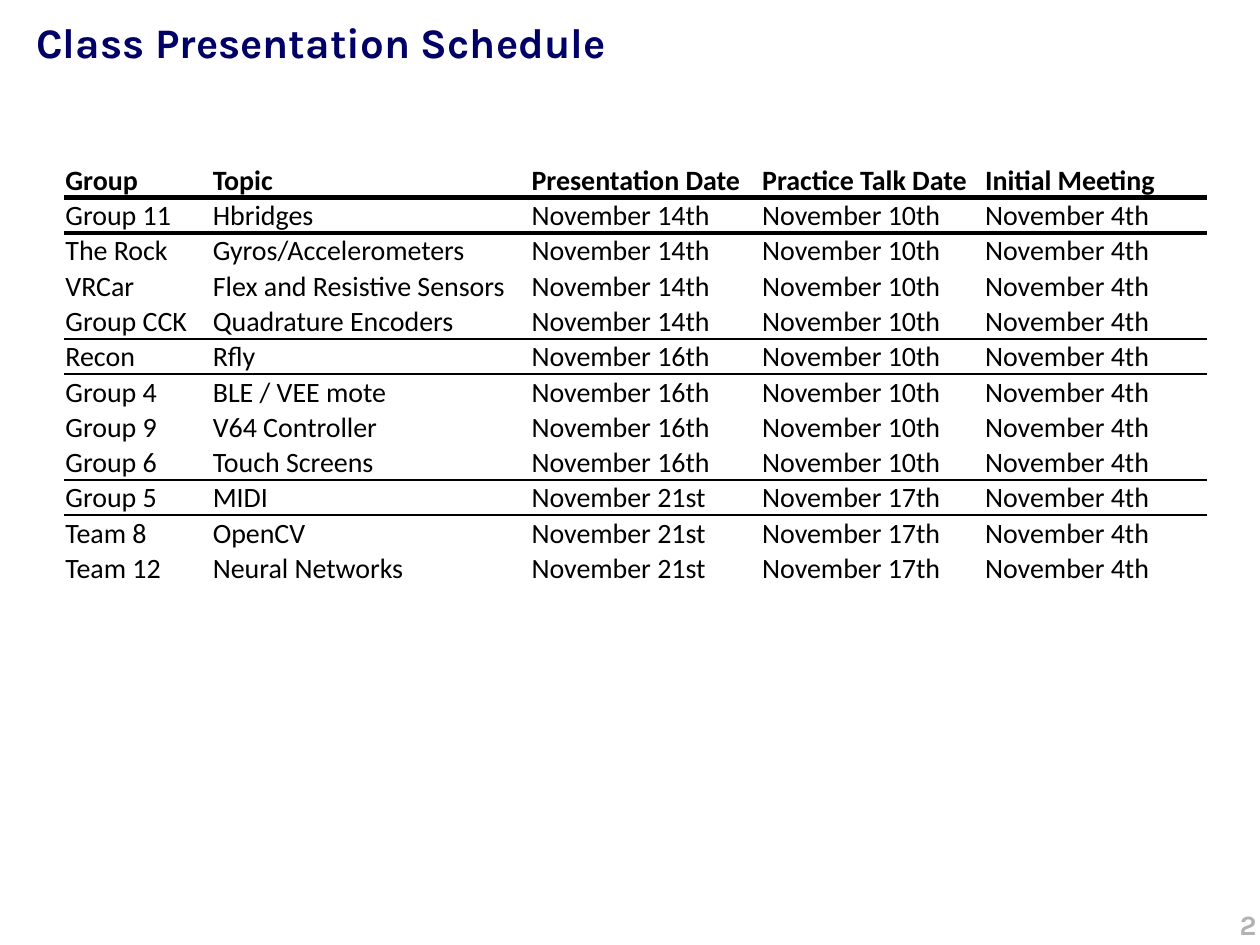
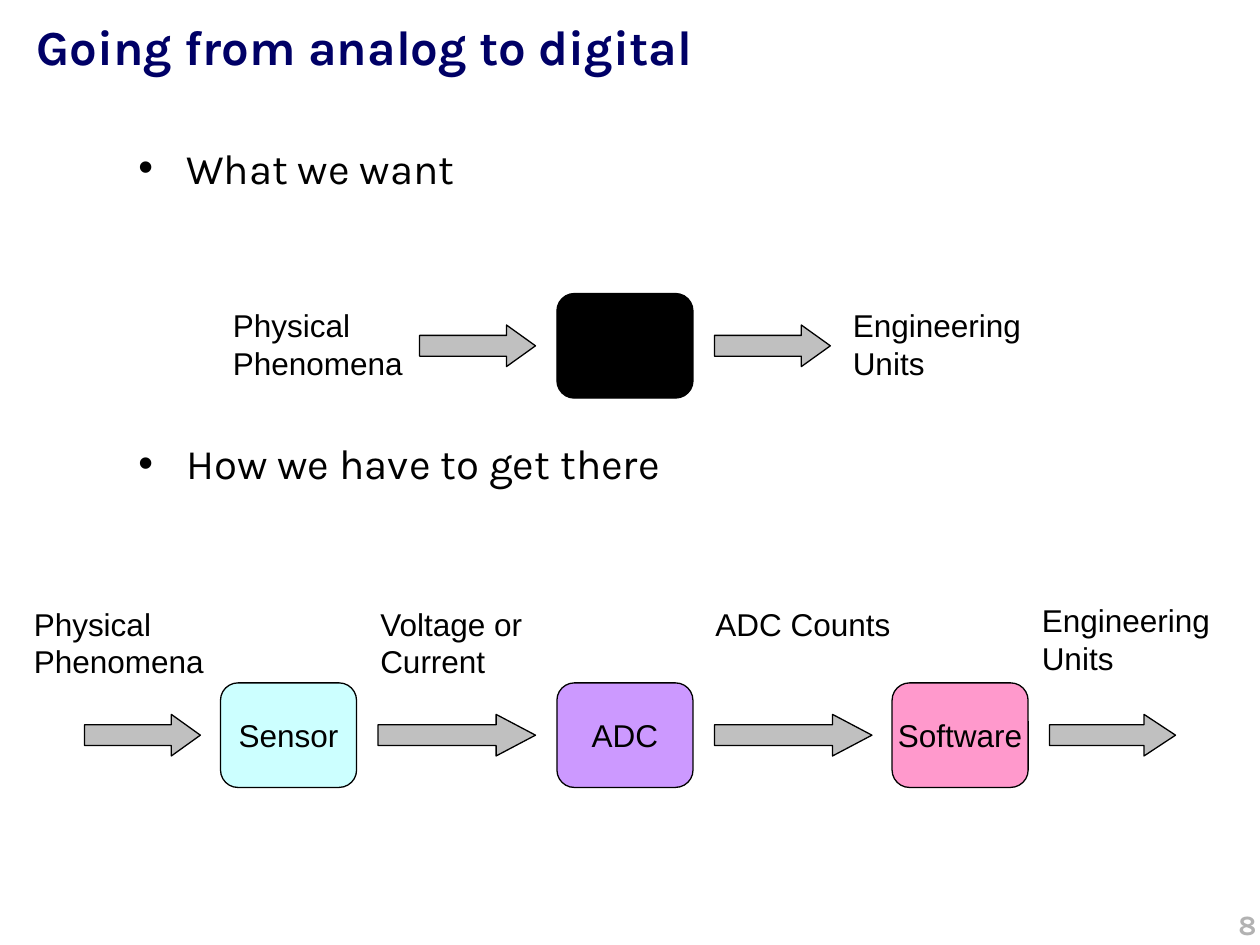
from lxml import etree
from pptx import Presentation
from pptx.dml.color import RGBColor
from pptx.enum import shapes, text
from pptx.oxml import ns
from pptx.util import Inches, Pt

NAVY, BLACK, GRAY, SILVER = "000066", "000000", "B2B2B2", "C0C0C0"
TITLE_FONT, LABEL_FONT, TABLE_FONT = "Karla", "Arial", "Calibri"
NO_GRID_STYLE = "{2D5ABB26-0587-4C30-8999-92F81FD0307C}"

HEADINGS = ["Group", "Topic", "Presentation Date", "Practice Talk Date", "Initial Meeting"]
COLUMN_WIDTHS = [1.17, 2.53, 1.83, 1.77, 1.77]
INITIAL_MEETING = "November 4th"
SESSIONS = [
    ("November 14th", "November 10th", [
        ("Group 11", "Hbridges"),
        ("The Rock", "Gyros/Accelerometers"),
        ("VRCar", "Flex and Resistive Sensors"),
        ("Group CCK", "Quadrature Encoders")]),
    ("November 16th", "November 10th", [
        ("Recon", "Rfly"),
        ("Group 4", "BLE / VEE mote"),
        ("Group 9", "V64 Controller"),
        ("Group 6", "Touch Screens")]),
    ("November 21st", "November 17th", [
        ("Group 5", "MIDI"),
        ("Team 8", "OpenCV"),
        ("Team 12", "Neural Networks")]),
]

BOX_WIDTH, BOX_HEIGHT, ARROW_HEIGHT = 1.08, 0.83, 0.33
ARROW_OFFSET, LABEL_WIDTH = 0.25, 1.67


def color(value):
    return RGBColor.from_string(value)


def add_run(paragraph, words, size, font, ink=BLACK, bold=False):
    run = paragraph.add_run()
    run.text = words
    run.font.size = Pt(size)
    run.font.name = font
    run.font.bold = bold
    run.font.color.rgb = color(ink)


def add_text_box(slide, left, top, width, height):
    box = slide.shapes.add_textbox(Inches(left), Inches(top), Inches(width), Inches(height))
    box.text_frame.word_wrap = True
    return box.text_frame


def add_framed_slide(presentation, title, title_size, number):
    slide = presentation.slides.add_slide(presentation.slide_layouts[6])
    title_frame = add_text_box(slide, 0.19, 0.08, 9.71, 1)
    add_run(title_frame.paragraphs[0], title, title_size, TITLE_FONT, NAVY, True)
    paragraph = add_text_box(slide, 6.9, 7.15, 3.17, 0.5).paragraphs[0]
    paragraph.alignment = text.PP_ALIGN.RIGHT
    add_run(paragraph, str(number), 16, TITLE_FONT, GRAY, True)
    return slide


def add_border(cell, side, width):
    line = etree.Element(ns.qn(f"a:{side}"), w=str(Pt(width)))
    fill = etree.SubElement(line, ns.qn("a:solidFill"))
    etree.SubElement(fill, ns.qn("a:srgbClr"), val=BLACK)
    cell._tc.get_or_add_tcPr().insert(0, line)


def fill_cell(cell, words, bold):
    cell.fill.background()
    cell.vertical_anchor = text.MSO_ANCHOR.BOTTOM
    cell.margin_left = cell.margin_right = cell.margin_top = Inches(0.01)
    cell.margin_bottom = 0
    add_run(cell.text_frame.paragraphs[0], words, 16, TABLE_FONT, bold=bold)


def add_schedule(slide, left, top):
    rows = [HEADINGS]
    rules = {0: 3}
    for talk_date, practice_date, teams in SESSIONS:
        rows += [[group, topic, talk_date, practice_date, INITIAL_MEETING]
                 for group, topic in teams]
        rules.setdefault(len(rows) - 1, 1)
    rules.pop(len(rows) - 1)

    frame = slide.shapes.add_table(len(rows), len(HEADINGS), Inches(left), Inches(top),
                                   Inches(sum(COLUMN_WIDTHS)), Inches(3.39))
    table = frame.table
    table.first_row = table.horz_banding = False
    table._tbl.tblPr.find(ns.qn("a:tableStyleId")).text = NO_GRID_STYLE
    for column, width in zip(table.columns, COLUMN_WIDTHS):
        column.width = Inches(width)
    for index, values in enumerate(rows):
        table.rows[index].height = Inches(0.28 if index else 0.29)
        for cell, words in zip(table.rows[index].cells, values):
            fill_cell(cell, words, index == 0)
            if index in rules:
                add_border(cell, "lnB", rules[index])
            if index - 1 in rules:
                add_border(cell, "lnT", rules[index - 1])


def add_bullets(slide, left, top, width, height, bullets):
    frame = add_text_box(slide, left, top, width, height)
    for index, (words, space_before) in enumerate(bullets):
        paragraph = frame.add_paragraph() if index else frame.paragraphs[0]
        paragraph.space_before = Pt(space_before)
        properties = paragraph._p.get_or_add_pPr()
        properties.set("marL", str(Inches(0.38)))
        properties.set("indent", str(-Inches(0.38)))
        etree.SubElement(properties, ns.qn("a:buFont"), typeface=LABEL_FONT)
        etree.SubElement(properties, ns.qn("a:buChar"), char="•")
        add_run(paragraph, words, 24, TITLE_FONT)


def add_block(slide, kind, left, top, width, height, fill):
    shape = slide.shapes.add_shape(kind, Inches(left), Inches(top), Inches(width), Inches(height))
    shape.shadow.inherit = False
    shape.fill.solid()
    shape.fill.fore_color.rgb = color(fill)
    shape.line.color.rgb = color(BLACK)
    shape.line.width = Pt(0.75)
    return shape


def add_flow(slide, top, stages, arrows, labels):
    for left, name, fill in stages:
        stage = add_block(slide, shapes.MSO_SHAPE.ROUNDED_RECTANGLE,
                          left, top, BOX_WIDTH, BOX_HEIGHT, fill)
        if name:
            frame = stage.text_frame
            frame.word_wrap = False
            frame.vertical_anchor = text.MSO_ANCHOR.MIDDLE
            frame.paragraphs[0].alignment = text.PP_ALIGN.CENTER
            add_run(frame.paragraphs[0], name, 18, LABEL_FONT)
    for left, width in arrows:
        arrow = add_block(slide, shapes.MSO_SHAPE.RIGHT_ARROW,
                          left, top + ARROW_OFFSET, width, ARROW_HEIGHT, SILVER)
        arrow.adjustments[1] = width / 4 / ARROW_HEIGHT
    for left, offset, lines in labels:
        frame = add_text_box(slide, left, top + offset, LABEL_WIDTH, 0.4 if lines == ["ADC Counts"] else 0.7)
        for index, words in enumerate(lines):
            paragraph = frame.add_paragraph() if index else frame.paragraphs[0]
            add_run(paragraph, words, 18, LABEL_FONT)


def build_schedule_slide(presentation):
    slide = add_framed_slide(presentation, "Class Presentation Schedule", 24, 2)
    add_schedule(slide, 0.51, 1.28)


def build_conversion_slide(presentation):
    slide = add_framed_slide(presentation, "Going from analog to digital", 28, 8)
    add_bullets(slide, 1, 1.08, 8, 5.33,
                [("What we want", 4.8), ("How we have to get there", 140)])
    phenomena, units = ["Physical", "Phenomena"], ["Engineering Units"]
    add_flow(slide, 2.33,
             stages=[(4.42, "", BLACK)],
             arrows=[(3.33, 0.92), (5.67, 0.92)],
             labels=[(1.75, 0.05, phenomena), (6.67, 0.05, units)])
    add_flow(slide, 5.42,
             stages=[(1.75, "Sensor", "CCFFFF"), (4.42, "ADC", "CC99FF"),
                     (7.08, "Software", "FF99CC")],
             arrows=[(0.67, 0.92), (3, 1.25), (5.67, 1.25), (8.33, 1)],
             labels=[(0.17, -0.67, phenomena), (2.92, -0.67, ["Voltage or", "Current"]),
                     (5.58, -0.67, ["ADC Counts"]), (8.17, -0.7, units)])


def main():
    presentation = Presentation()
    presentation.slide_width = Inches(10)
    presentation.slide_height = Inches(7.5)
    build_schedule_slide(presentation)
    build_conversion_slide(presentation)
    presentation.save("out.pptx")


if __name__ == "__main__":
    main()
